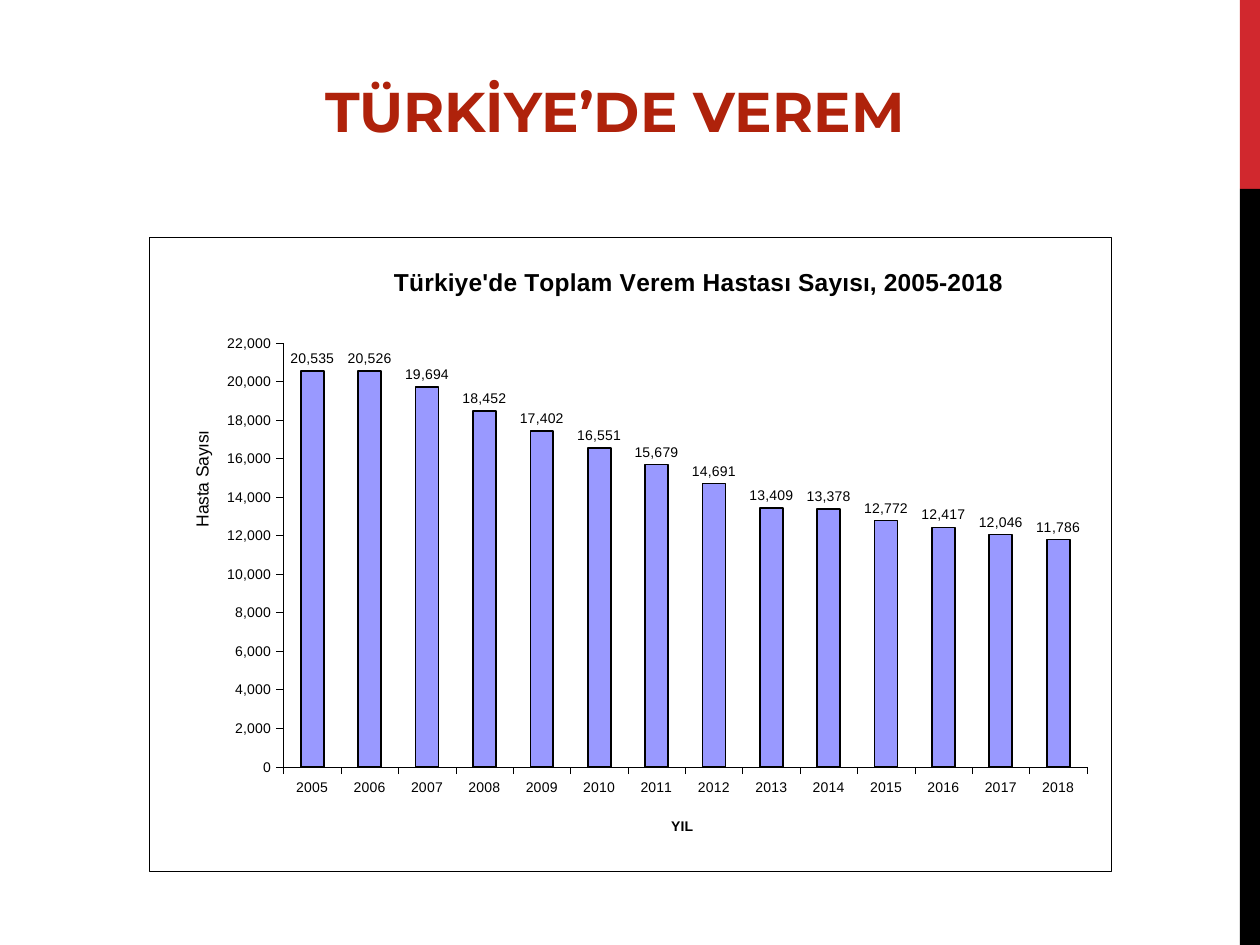
from dataclasses import dataclass

from lxml import etree
from pptx import Presentation
from pptx.chart import data as chart_data
from pptx.dml import color
from pptx.enum import chart as chart_enum, shapes, text
from pptx.oxml import ns
from pptx.util import Pt

COLORS = {
    "red": "D1282E", "title": "AF220B", "bar": "9999FF",
    "black": "000000", "white": "FFFFFF",
}
PATIENTS = {
    2005: 20535, 2006: 20526, 2007: 19694, 2008: 18452, 2009: 17402,
    2010: 16551, 2011: 15679, 2012: 14691, 2013: 13409, 2014: 13378,
    2015: 12772, 2016: 12417, 2017: 12046, 2018: 11786,
}


@dataclass
class SideBar:
    top: float
    height: float
    color: str


@dataclass
class ChartLabel:
    words: str
    size: float
    bold: bool
    x: float
    y: float
    rotation: int = 0


SIDE_BARS = [SideBar(0, 108, "red"), SideBar(108, 432, "black")]
HEADING = ChartLabel("Türkiye'de Toplam Verem Hastası Sayısı, 2005-2018", 14, True, 0.25, 0.04)
YEAR_LABEL = ChartLabel("YIL", 8, True, 0.54, 0.91)
COUNT_LABEL = ChartLabel("Hasta Sayısı", 10, False, 0.04, 0.3, -5400000)


def rgb(name: str) -> color.RGBColor:
    return color.RGBColor.from_string(COLORS[name])


def style_font(font, size: float, bold: bool = False, name: str = "Arial", tint: str = "black") -> None:
    font.name, font.size, font.bold = name, Pt(size), bold
    font.color.rgb = rgb(tint)


def style_line(line, tint: str, width: float) -> None:
    line.color.rgb = rgb(tint)
    line.width = Pt(width)


def add_side_bar(page, bar: SideBar) -> None:
    box = page.shapes.add_shape(
        shapes.MSO_SHAPE.RECTANGLE, Pt(708.5), Pt(bar.top), Pt(11.5), Pt(bar.height))
    box.shadow.inherit = False
    box.fill.solid()
    box.fill.fore_color.rgb = rgb(bar.color)
    box.line.fill.background()


def make_layout(**values):
    """Build a manual chart layout from its setting names and values."""
    layout = etree.Element(ns.qn("c:layout"))
    manual = etree.SubElement(layout, ns.qn("c:manualLayout"))
    for key, value in values.items():
        etree.SubElement(manual, ns.qn(f"c:{key}")).set("val", str(value))
    return layout


def remove_layout(parent) -> None:
    for old in parent.findall(ns.qn("c:layout")):
        parent.remove(old)


def set_label(title, label: ChartLabel) -> None:
    frame = title.text_frame
    frame.text = label.words
    style_font(frame.paragraphs[0].font, label.size, label.bold)
    body = frame._txBody.find(ns.qn("a:bodyPr"))
    body.set("rot", str(label.rotation))
    body.set("vert", "horz")
    element = title._element
    remove_layout(element)
    element.find(ns.qn("c:tx")).addnext(
        make_layout(xMode="edge", yMode="edge", x=label.x, y=label.y))


def make_area(border: bool):
    """Build a white chart area, with or without a thin black border."""
    area = etree.Element(ns.qn("c:spPr"))
    fill = etree.SubElement(area, ns.qn("a:solidFill"))
    etree.SubElement(fill, ns.qn("a:srgbClr")).set("val", COLORS["white"])
    line = etree.SubElement(area, ns.qn("a:ln"))
    if border:
        line.set("w", str(Pt(0.25)))
        ink = etree.SubElement(line, ns.qn("a:solidFill"))
        etree.SubElement(ink, ns.qn("a:srgbClr")).set("val", COLORS["black"])
    else:
        etree.SubElement(line, ns.qn("a:noFill"))
    return area


def style_axis(axis, label: ChartLabel) -> None:
    axis.major_tick_mark = chart_enum.XL_TICK_MARK.OUTSIDE
    axis.minor_tick_mark = chart_enum.XL_TICK_MARK.NONE
    style_font(axis.tick_labels.font, 8)
    style_line(axis.format.line, "black", 0.25)
    set_label(axis.axis_title, label)


def add_patient_chart(page) -> None:
    data = chart_data.CategoryChartData(number_format="#,##0")
    data.categories = [str(year) for year in PATIENTS]
    data.add_series("Series 1", list(PATIENTS.values()))
    chart = page.shapes.add_chart(
        chart_enum.XL_CHART_TYPE.COLUMN_CLUSTERED,
        Pt(85), Pt(135.2), Pt(550), Pt(363), data).chart
    chart.has_legend = False
    style_font(chart.font, 8)
    chart.has_title = True
    set_label(chart.chart_title, HEADING)

    # Axes
    style_axis(chart.category_axis, YEAR_LABEL)
    values = chart.value_axis
    style_axis(values, COUNT_LABEL)
    values.minimum_scale, values.maximum_scale, values.major_unit = 0, 22000, 2000
    values.tick_labels.number_format = "#,##0"
    values.tick_labels.number_format_is_linked = False
    values.has_major_gridlines = True
    style_line(values.major_gridlines.format.line, "white", 0.25)

    # Columns and their values
    plot = chart.plots[0]
    plot.gap_width = 150
    plot.vary_by_categories = False
    series = plot.series[0]
    series.format.fill.solid()
    series.format.fill.fore_color.rgb = rgb("bar")
    style_line(series.format.line, "black", 1)
    labels = series.data_labels
    labels.show_value = True
    labels.number_format = "#,##0"
    labels.number_format_is_linked = False
    labels.position = chart_enum.XL_LABEL_POSITION.OUTSIDE_END
    style_font(labels.font, 8)

    # Chart and plot areas
    chart_element = chart._chartSpace.find(ns.qn("c:chart"))
    chart_element.addnext(make_area(border=True))
    plot_area = chart_element.find(ns.qn("c:plotArea"))
    remove_layout(plot_area)
    plot_area.insert(0, make_layout(
        layoutTarget="inner", xMode="edge", yMode="edge", x=0.14, y=0.167, w=0.835, h=0.668))
    plot_area.append(make_area(border=False))


def add_title(page) -> None:
    title = page.shapes.title
    title.left, title.top, title.width, title.height = Pt(127.5), Pt(40.3), Pt(448), Pt(46)
    frame = title.text_frame
    frame.text = "TÜRKİYE’DE VEREM"
    frame.vertical_anchor = text.MSO_ANCHOR.TOP
    para = frame.paragraphs[0]
    para.alignment = text.PP_ALIGN.CENTER
    style_font(para.font, 32, True, "Montserrat", "title")


def main() -> None:
    deck = Presentation()
    deck.slide_width, deck.slide_height = Pt(720), Pt(540)
    page = deck.slides.add_slide(deck.slide_layouts[5])
    for bar in SIDE_BARS:
        add_side_bar(page, bar)
    add_title(page)
    add_patient_chart(page)
    deck.save("out.pptx")


if __name__ == "__main__":
    main()
